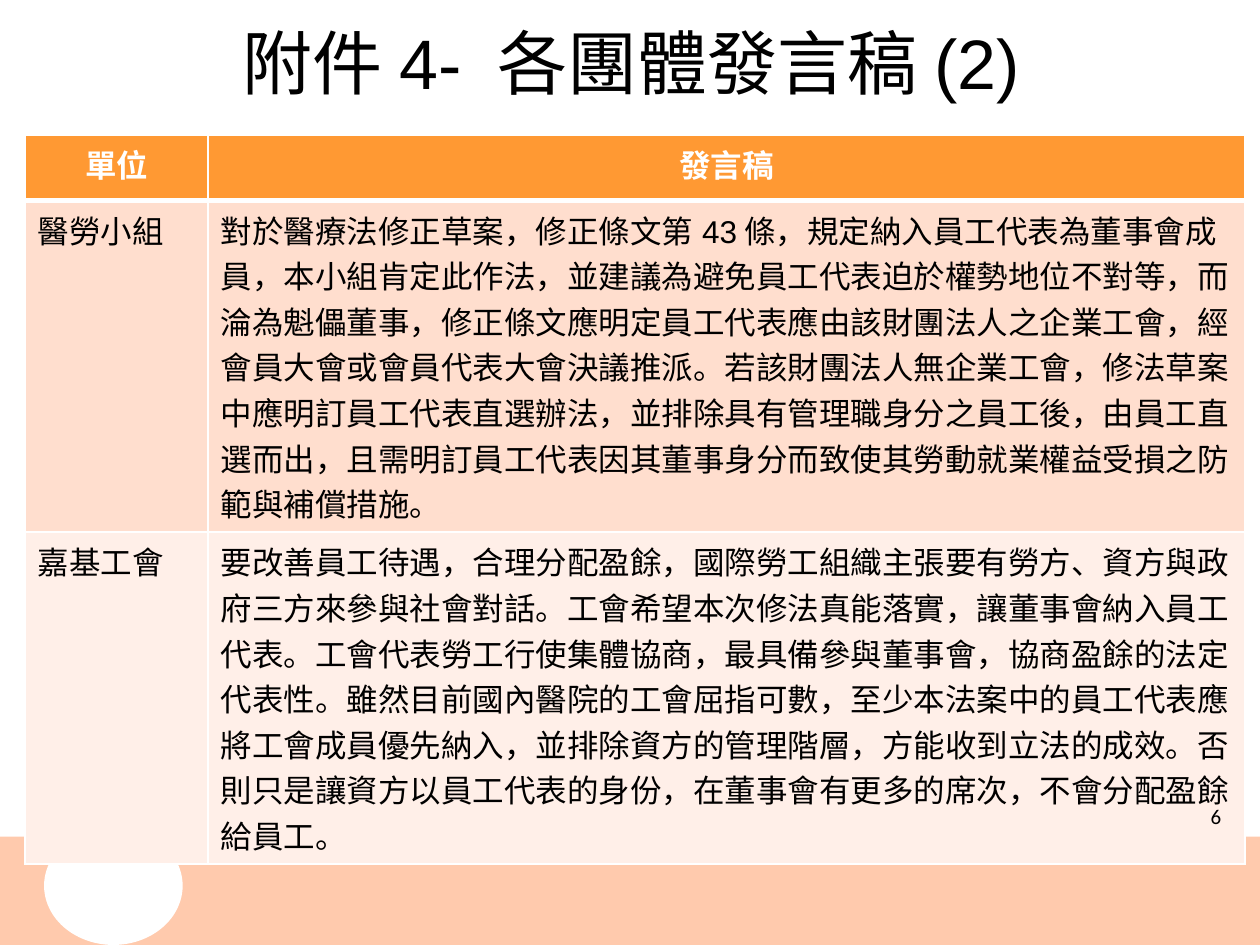
import pptx
import pptx.dml.color
import pptx.enum.shapes
import pptx.enum.text
import pptx.oxml
import pptx.oxml.ns
import pptx.util
from pptx.util import Inches

RGBColor = pptx.dml.color.RGBColor
PP_ALIGN = pptx.enum.text.PP_ALIGN
MSO_ANCHOR = pptx.enum.text.MSO_ANCHOR
MSO_SHAPE = pptx.enum.shapes.MSO_SHAPE

WHITE = RGBColor(0xFF, 0xFF, 0xFF)
BLACK = RGBColor(0, 0, 0)
PEACH = RGBColor(0xFF, 0xCA, 0xAD)
ORANGE = RGBColor(0xFF, 0x99, 0x33)
ROW_FILLS = [ORANGE, RGBColor(0xFF, 0xDE, 0xCE), RGBColor(0xFF, 0xEF, 0xE8)]

COLUMN_WIDTHS = [1.45, 8.23]
ROW_HEIGHTS = [0.52, 2.45, 2.45]
STATEMENTS = [
    ("單位", "發言稿"),
    ("醫勞小組",
     "對於醫療法修正草案，修正條文第43條，規定納入員工代表為董事會成員，"
     "本小組肯定此作法，並建議為避免員工代表迫於權勢地位不對等，而淪為魁儡董事，"
     "修正條文應明定員工代表應由該財團法人之企業工會，經會員大會或會員代表大會決議推派。"
     "若該財團法人無企業工會，修法草案中應明訂員工代表直選辦法，"
     "並排除具有管理職身分之員工後，由員工直選而出，"
     "且需明訂員工代表因其董事身分而致使其勞動就業權益受損之防範與補償措施。"),
    ("嘉基工會",
     "要改善員工待遇，合理分配盈餘，國際勞工組織主張要有勞方、資方與政府三方來參與社會對話。"
     "工會希望本次修法真能落實，讓董事會納入員工代表。"
     "工會代表勞工行使集體協商，最具備參與董事會，協商盈餘的法定代表性。"
     "雖然目前國內醫院的工會屈指可數，至少本法案中的員工代表應將工會成員優先納入，"
     "並排除資方的管理階層，方能收到立法的成效。"
     "否則只是讓資方以員工代表的身份，在董事會有更多的席次，不會分配盈餘給員工。"),
]


def write_text(frame, text, size, font_name="Arial", color=BLACK, bold=False,
               align=PP_ALIGN.LEFT):
    frame.text = text
    para = frame.paragraphs[0]
    para.alignment = align
    for span in para.runs:
        span.font.size = pptx.util.Pt(size)
        span.font.name = font_name
        span.font.bold = bold
        span.font.color.rgb = color


def add_decoration(page, preset, left, top, width, height, fill):
    shape = page.shapes.add_shape(
        preset, Inches(left), Inches(top), Inches(width), Inches(height))
    shape.shadow.inherit = False
    shape.fill.solid()
    shape.fill.fore_color.rgb = fill
    shape.line.fill.background()


def add_text_box(page, left, top, width, height, anchor, text, size, **style):
    box = page.shapes.add_textbox(
        Inches(left), Inches(top), Inches(width), Inches(height))
    box.text_frame.word_wrap = True
    box.text_frame.vertical_anchor = anchor
    write_text(box.text_frame, text, size, **style)


def set_borders(cell, widths):
    """Draw white cell edges; widths maps L, R, T, B to points."""
    properties = cell._tc.get_or_add_tcPr()
    for position, side in enumerate("LRTB"):
        width = pptx.util.Pt(widths[side])
        line = pptx.oxml.parse_xml(
            f'<a:ln{side} {pptx.oxml.ns.nsdecls("a")} w="{width}">'
            f'<a:solidFill><a:srgbClr val="{WHITE}"/></a:solidFill></a:ln{side}>')
        properties.insert(position, line)


def add_statement_table(page):
    table = page.shapes.add_table(
        len(ROW_HEIGHTS), len(COLUMN_WIDTHS), Inches(0.2), Inches(1.07),
        Inches(sum(COLUMN_WIDTHS)), Inches(sum(ROW_HEIGHTS))).table
    for column, width in zip(table.columns, COLUMN_WIDTHS):
        column.width = Inches(width)
    for index, (row, texts) in enumerate(zip(table.rows, STATEMENTS)):
        row.height = Inches(ROW_HEIGHTS[index])
        header = index == 0
        borders = {"L": 1, "R": 1, "T": 3 if index == 1 else 1,
                   "B": 3 if header else 1}
        for cell, text in zip(row.cells, texts):
            cell.fill.solid()
            cell.fill.fore_color.rgb = ROW_FILLS[index]
            set_borders(cell, borders)
            write_text(cell.text_frame, text, 18, bold=header,
                       color=WHITE if header else BLACK,
                       align=PP_ALIGN.CENTER if header else PP_ALIGN.LEFT)


def main():
    deck = pptx.Presentation()
    deck.slide_width, deck.slide_height = Inches(10), Inches(7.5)
    page = deck.slides.add_slide(deck.slide_layouts[6])
    add_decoration(page, MSO_SHAPE.RECTANGLE, 0, 6.64, 10, 0.86, PEACH)
    add_decoration(page, MSO_SHAPE.OVAL, 0.35, 6.56, 1.1, 0.94, WHITE)
    add_statement_table(page)
    add_text_box(page, 9.51, 6.33, 0.49, 0.35, MSO_ANCHOR.TOP, "6", 12,
                 font_name="Calibri")
    add_text_box(page, 0.51, 0.13, 9, 0.71, MSO_ANCHOR.MIDDLE,
                 "附件4- 各團體發言稿(2)", 40, align=PP_ALIGN.CENTER)
    deck.save("out.pptx")


if __name__ == "__main__":
    main()
